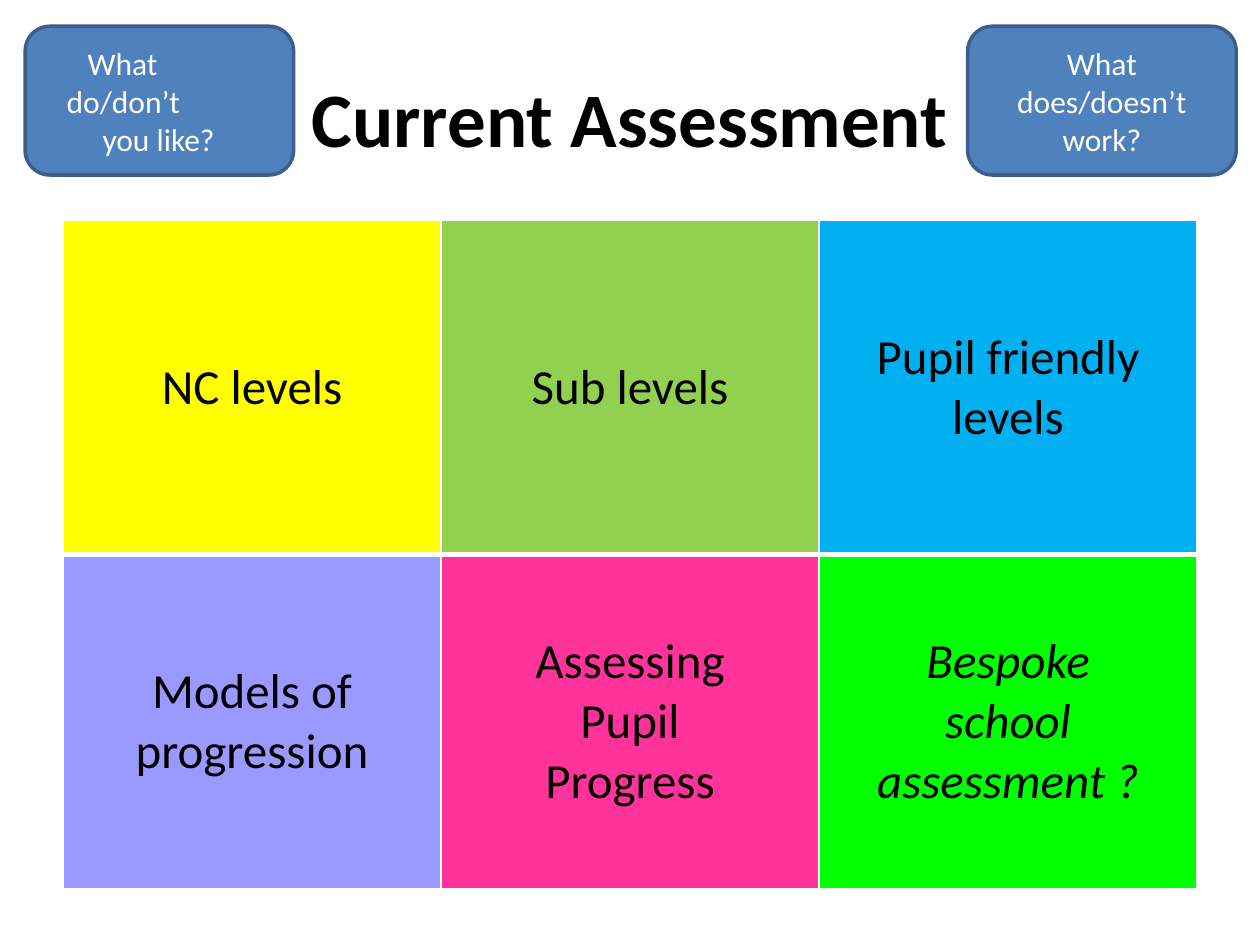
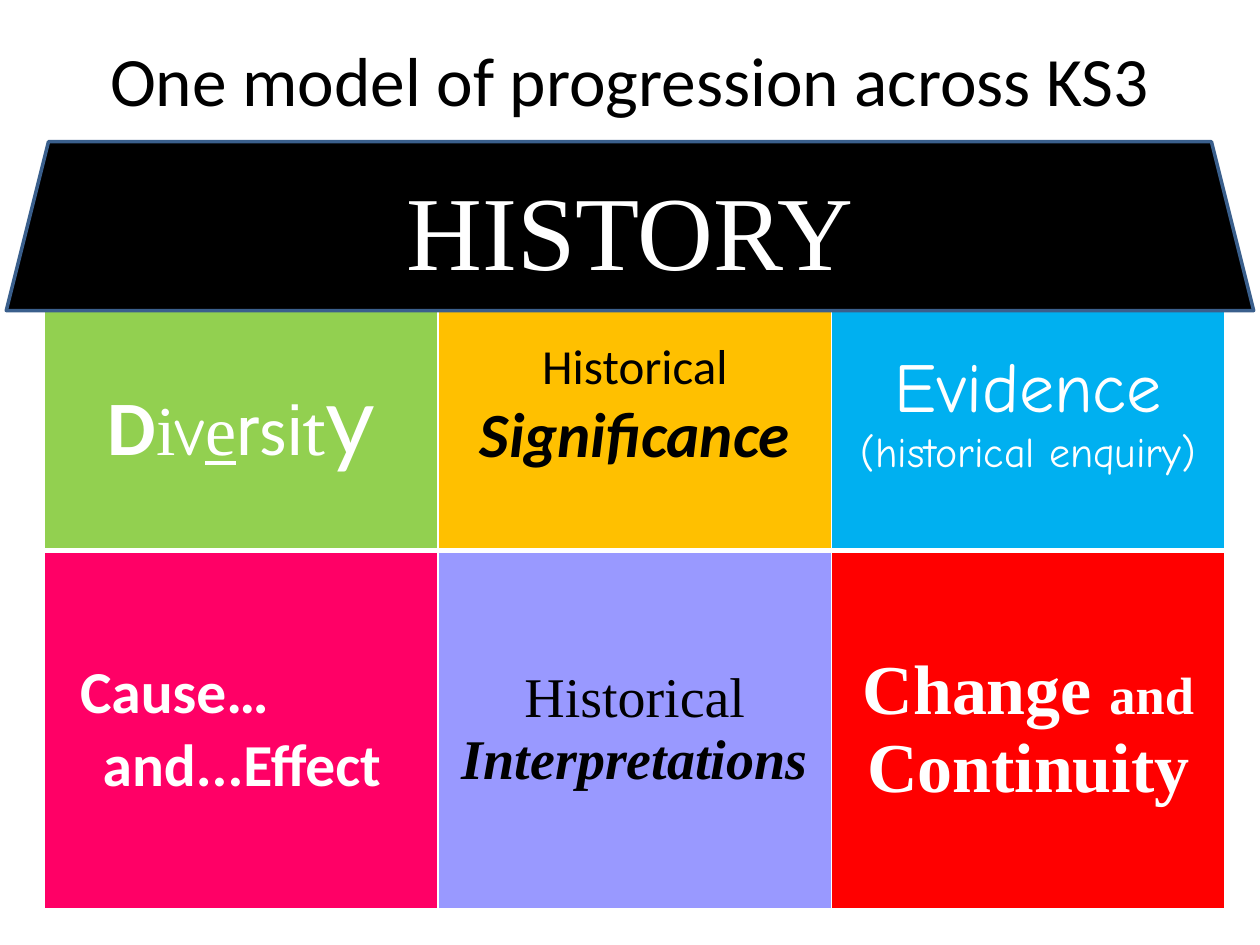
"""Build two slides on history assessment and a model of progression."""
from itertools import zip_longest

from lxml import etree
from pptx import Presentation
from pptx.dml.color import RGBColor
from pptx.enum import shapes, text
from pptx.oxml import ns
from pptx.util import Pt

BLACK, WHITE = "000000", "FFFFFF"
GREEN, SKY, LILAC = "92D050", "00B0F0", "9999FF"
BOX_BLUE, OUTLINE = "4F81BD", "3A5F8C"
SERIF, HAND = "Times New Roman", "Comic Neue"


def colour(value):
    return RGBColor.from_string(value)


def write(frame, lines, indents=(), **style):
    frame.word_wrap = True
    frame.vertical_anchor = text.MSO_ANCHOR.MIDDLE
    for number, (line, indent) in enumerate(zip_longest(lines, indents)):
        paragraph = frame.add_paragraph() if number else frame.paragraphs[0]
        paragraph.alignment = text.PP_ALIGN.CENTER
        if indent is not None:
            paragraph.alignment = text.PP_ALIGN.LEFT
            paragraph._p.get_or_add_pPr().set("marL", str(Pt(indent)))
        for words, changes in [(line, {})] if isinstance(line, str) else line:
            look = {"size": 28, "name": "Calibri", "color": BLACK, "bold": False,
                    "italic": False, "underline": False} | style | changes
            run = paragraph.add_run()
            run.text = words
            run.font.color.rgb = colour(look.pop("color"))
            run.font.size = Pt(look.pop("size"))
            for key, value in look.items():
                setattr(run.font, key, value)


def border(cell, side, width):
    line = etree.SubElement(cell._tc.get_or_add_tcPr(), ns.qn(f"a:ln{side}"), w=str(Pt(width)))
    fill = etree.SubElement(line, ns.qn("a:solidFill"))
    etree.SubElement(fill, ns.qn("a:srgbClr"), val=WHITE)


class Deck:
    def __init__(self):
        self.presentation = Presentation()
        self.presentation.slide_width, self.presentation.slide_height = Pt(720), Pt(540)
        self.slide = None

    def add_slide(self, title, top, **style):
        self.slide = self.presentation.slides.add_slide(self.presentation.slide_layouts[6])
        box = self.slide.shapes.add_textbox(Pt(36), Pt(top), Pt(648), Pt(90))
        write(box.text_frame, [title], **style)

    def shape(self, kind, place, fill, lines, **style):
        shape = self.slide.shapes.add_shape(kind, *map(Pt, place))
        shape.shadow.inherit = False
        shape.fill.solid()
        shape.fill.fore_color.rgb = colour(fill)
        shape.line.color.rgb = colour(OUTLINE)
        shape.line.width = Pt(2)
        write(shape.text_frame, lines, color=WHITE, **style)

    def grid(self, place, rows):
        left, top, width, height = place
        table = self.slide.shapes.add_table(
            len(rows), len(rows[0]), Pt(left), Pt(top), Pt(width), Pt(height)).table
        table.first_row = table.horz_banding = False
        for row_number, row in enumerate(rows):
            table.rows[row_number].height = Pt(height / len(rows))
            for column_number, (fill, lines, style) in enumerate(row):
                style = dict(style)
                cell = table.cell(row_number, column_number)
                for side in "LRTB":
                    divider = (row_number, side) in ((0, "B"), (1, "T"))
                    border(cell, side, 3 if divider else 1)
                cell.fill.solid()
                cell.fill.fore_color.rgb = colour(fill)
                cell.margin_top = Pt(style.pop("top_margin", 3.6))
                cell.vertical_anchor = text.MSO_ANCHOR.MIDDLE
                write(cell.text_frame, lines, **style)
        for column in table.columns:
            column.width = Pt(width / len(rows[0]))


def current_assessment(deck):
    deck.add_slide("Current Assessment", 21.6, size=44, bold=True)
    deck.grid((36, 126, 648, 382), [
        [("FFFF00", ["NC levels"], {}),
         (GREEN, ["Sub levels"], {}),
         (SKY, ["Pupil friendly levels"], {})],
        [(LILAC, ["Models of progression"], {}),
         ("FF3399", ["Assessing", "Pupil", "Progress"], {}),
         ("00FF00", ["Bespoke", "school assessment ?"], {"italic": True})],
    ])
    questions = [
        (14.4, ["What", "do/don’t", "you like?"], (24.5, 12.5, 33)),
        (553, ["What does/doesn’t work?"], ()),
    ]
    for left, lines, indents in questions:
        deck.shape(shapes.MSO_SHAPE.ROUNDED_RECTANGLE, (left, 15, 153.4, 85), BOX_BLUE,
                   lines, indents=indents, size=18)


def progression_model(deck):
    deck.add_slide("One model of progression across KS3", 0, size=39.6)
    diversity = [
        ("D", {"size": 44, "bold": True}),
        ("i", {"name": SERIF}),
        ("v", {"name": HAND}),
        ("e", {"name": SERIF, "underline": True}),
        ("r", {"name": "Roboto"}),
        ("s", {}),
        ("i", {"name": "Arial"}),
        ("t", {"name": "Cambria"}),
        ("y", {"name": "Lato", "size": 55}),
    ]
    significance = [("Historical ", {}), ("Significance", {"size": 36, "bold": True, "italic": True})]
    evidence = [("Evidence ", {}), ("(historical enquiry)", {"size": 24})]
    interpretations = [("Historical ", {}), ("Interpretations", {"bold": True, "italic": True})]
    change = [("Change ", {}), ("and", {"size": 30}), (" Continuity", {})]
    deck.grid((25.5, 110, 674.6, 409.4), [
        [(GREEN, [diversity], {"size": 40, "color": WHITE, "top_margin": 57}),
         ("FFC000", [significance], {"top_margin": 43}),
         (SKY, [evidence], {"size": 40, "name": HAND, "color": WHITE, "top_margin": 52})],
        [("FF0066", ["Cause…", "and...Effect"],
          {"size": 34, "color": WHITE, "bold": True, "indents": (13, 26)}),
         (LILAC, [interpretations], {"size": 32, "name": SERIF}),
         ("FF0000", [change], {"size": 40, "name": SERIF, "color": WHITE, "bold": True})],
    ])
    deck.shape(shapes.MSO_SHAPE.TRAPEZOID, (3.6, 81, 712.8, 96.5), BLACK,
               ["HISTORY"], size=60, name=SERIF)


def main():
    deck = Deck()
    current_assessment(deck)
    progression_model(deck)
    deck.presentation.save("out.pptx")


if __name__ == "__main__":
    main()
